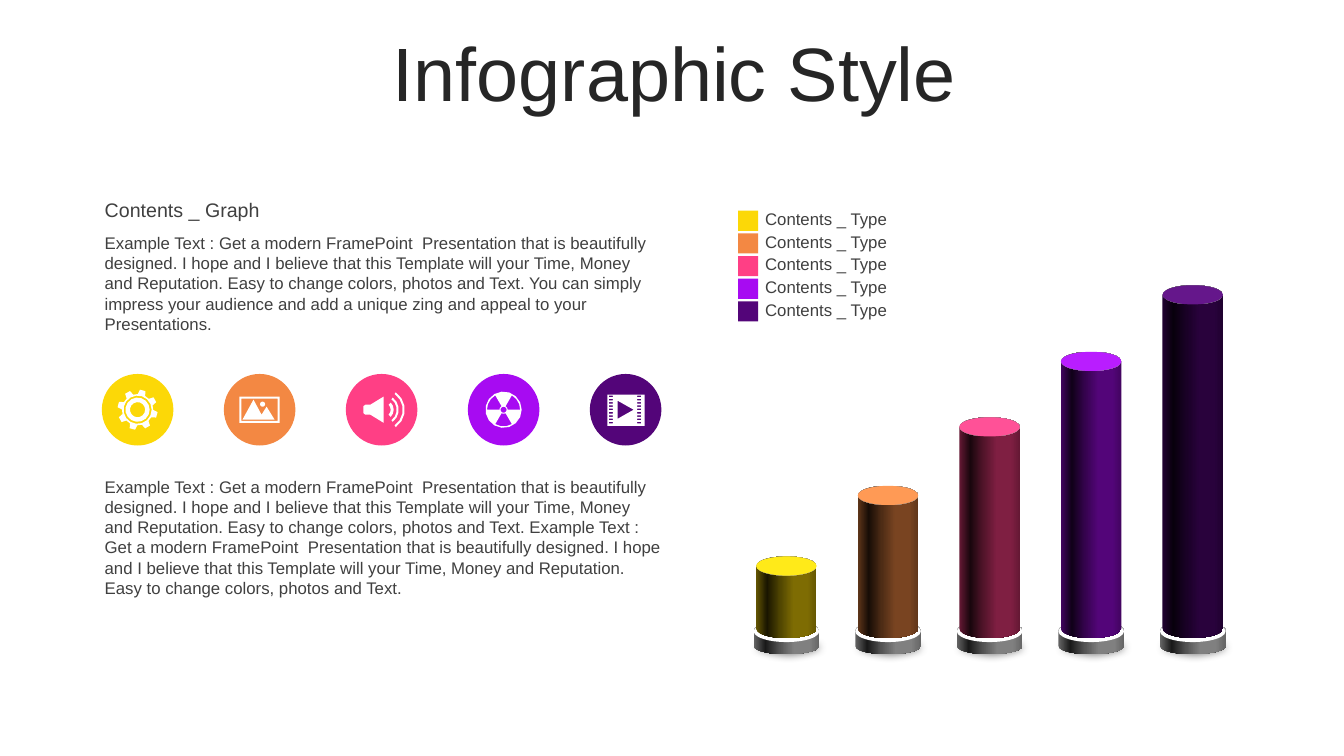
from math import ceil, cos, sin, radians
from lxml.etree import SubElement
from pptx import Presentation
from pptx.dml.color import RGBColor
from pptx.enum.shapes import MSO_SHAPE
from pptx.enum.text import MSO_ANCHOR, PP_ALIGN
from pptx.oxml.ns import qn
from pptx.util import Inches, Pt

COLORS = ["FCD807", "F38843", "FF3F85", "A70BF2", "530579"]
BAR_TOPS = [5.52, 4.82, 4.14, 3.49, 2.83]
INTRO = ("Example Text : Get a modern FramePoint  Presentation that is beautifully designed. "
         "I hope and I believe that this Template will your Time, Money and Reputation. "
         "Easy to change colors, photos and Text. ")
TEXTS = [  # words, left, top, width, height, format
    ("Infographic Style", 0.36, 0.37, 12.66, 0.79,
     {"size": 54, "color": "262626", "align": PP_ALIGN.CENTER, "anchor": MSO_ANCHOR.MIDDLE}),
    ("Contents _ Graph", 0.94, 1.91, 5.73, 0.34, {"size": 14}),
    (INTRO + "You can simply impress your audience and add a unique zing and appeal "
     "to your Presentations.", 0.94, 2.26, 5.73, 1.11, {}),
    (INTRO + INTRO.strip(), 0.94, 4.68, 5.73, 1.31, {}),
]
LEGEND = "Contents _ Type"
LEGEND_LEFT, LEGEND_TOP, LEGEND_PITCH, SWATCH = 7.32, 2.09, 0.225, 0.2
DISC_LEFT, DISC_TOP, DISC_PITCH, DISC = 1.01, 3.71, 1.21, 0.71
BAR_LEFT, BAR_PITCH, BAR_WIDTH, BAR_BOTTOM, CAP = 7.5, 1.0075, 0.6, 6.33, 0.19
BASE_WIDTH, BASE_TOP, BASE_HEIGHT, RIM = 0.65, 6.17, 0.32, 0.2

deck = Presentation()
deck.slide_width, deck.slide_height = Inches(13.33), Inches(7.5)
page = deck.slides.add_slide(deck.slide_layouts[6])


def rgb(value):
    return RGBColor.from_string(value)


def adjust(value, factor=1, shift=0):
    """Scale and shift each channel of a hex colour."""
    channels = (int(value[i:i + 2], 16) for i in (0, 2, 4))
    return "".join(f"{min(255, int(c * factor) + shift):02X}" for c in channels)


def add_text(words, left, top, width, height, style):
    look = {"size": 12, "color": "404040", "align": PP_ALIGN.LEFT,
            "anchor": MSO_ANCHOR.TOP} | style
    frame = page.shapes.add_textbox(*map(Inches, (left, top, width, height))).text_frame
    frame.word_wrap = True
    frame.vertical_anchor = look["anchor"]
    para = frame.paragraphs[0]
    para.alignment = look["align"]
    if look["size"] > 50:
        para.line_spacing = 0.9
    span = para.add_run()
    span.text = words
    for name, value in {"name": "Arial", "size": Pt(look["size"])}.items():
        setattr(span.font, name, value)
    span.font.color.rgb = rgb(look["color"])


def paint(shape, color):
    shape.shadow.inherit = False
    shape.fill.solid()
    shape.fill.fore_color.rgb = rgb(color)
    shape.line.fill.background()
    return shape


def add_shape(kind, left, top, width, height, color):
    return paint(page.shapes.add_shape(kind, *map(Inches, (left, top, width, height))), color)


def add_cylinder(left, top, width, height, cap, color):
    """Draw a can shaded across, darkest near its left side."""
    can = add_shape(MSO_SHAPE.CAN, left, top, width, height, color)
    can.adjustments[0] = cap / min(width, height)
    can.fill.gradient()
    can.fill.gradient_angle = 0
    stops = can.fill._fill._gradFill.find(qn("a:gsLst"))
    for stop in list(stops):
        stops.remove(stop)
    for place, factor in ((0, 0.8), (18, 0.2), (40, 0.65), (62, 1), (85, 1), (100, 0.8)):
        stop = SubElement(stops, qn("a:gs"), pos=str(place * 1000))
        SubElement(stop, qn("a:srgbClr"), val=adjust(color, factor))


def add_shadow(left, top, width, height):
    shade = add_shape(MSO_SHAPE.OVAL, left, top, width, height, "808080")
    effects = shade._element.spPr.find(qn("a:effectLst"))
    SubElement(effects, qn("a:softEdge"), rad=str(Inches(0.08)))


def arc(radius, start=0, end=360, x=0, y=0):
    """Points along an arc, at most 24 degrees apart."""
    steps = ceil(abs(end - start) / 24)
    turns = [radians(start + (end - start) * i / steps) for i in range(steps + 1)]
    return [(x + radius * cos(turn), y + radius * sin(turn)) for turn in turns]


def band(inner, outer, start, end, x=0):
    return arc(outer, start, end, x) + arc(inner, end, start, x)


def box(left, top, width, height):
    return [(left, top), (left + width, top), (left + width, top + height), (left, top + height)]


def gear():
    teeth = [(r * cos(radians(a)), r * sin(radians(a)))
             for tooth in range(8)
             for r, a in ((spoke, tooth * 45 - 75 + turn) for spoke, turn in
                          ((0.155, -14), (0.2, -8), (0.2, 8), (0.155, 14)))]
    return [teeth, arc(0.14), arc(0.12), arc(0.075)]


def photo():
    hills = [(-0.06, -0.1), (0.02, 0.05), (0.07, -0.03), (0.15, 0.1), (-0.17, 0.1)]
    return [box(-0.2, -0.13, 0.4, 0.26), box(-0.18, -0.11, 0.36, 0.22),
            hills, arc(0.025, x=0.03, y=-0.055)]


def speaker():
    horn = [(0.02, -0.13), (0.02, 0.13), (-0.11, 0.05), (-0.16, 0.05), (-0.18, 0.035),
            (-0.18, -0.035), (-0.16, -0.05), (-0.11, -0.05)]
    waves = ((0.07, 0.1, 45), (0.13, 0.15, 53), (0.19, 0.21, 55))
    return [horn] + [band(a, b, -turn, turn, x=0.02) for a, b, turn in waves]


def radiation():
    blades = [band(0.04, 0.165, turn, turn + 60) for turn in (60, 180, 300)]
    return [arc(0.18), arc(0.03)] + blades


def film():
    holes = [box(left, -0.14 + row * 0.0325, 0.04, 0.015)
             for left in (-0.165, 0.115) for row in range(9)]
    return [box(-0.18, -0.15, 0.37, 0.31), [(-0.08, -0.09), (-0.08, 0.09), (0.08, 0)]] + holes


def add_icon(outlines, x, y):
    """Join outlines, given from the icon's middle, into one white shape."""
    placed = [[(Inches(x + dx), Inches(y + dy)) for dx, dy in line] for line in outlines]
    builder = page.shapes.build_freeform(*placed[0][0])
    for index, line in enumerate(placed):
        if index:
            builder.move_to(*line[0])
        builder.add_line_segments(line[1:], close=True)
    paint(builder.convert_to_shape(), "FFFFFF")


for entry in TEXTS:
    add_text(*entry)

ICONS = [gear, photo, speaker, radiation, film]
for column, (color, bar_top, icon) in enumerate(zip(COLORS, BAR_TOPS, ICONS)):
    row_top = LEGEND_TOP + column * LEGEND_PITCH
    add_shape(MSO_SHAPE.RECTANGLE, LEGEND_LEFT, row_top, SWATCH, SWATCH, color)
    add_text(LEGEND, LEGEND_LEFT + 0.17, row_top - 0.07, 1.43, 0.3,
             {"anchor": MSO_ANCHOR.MIDDLE})

    disc_left = DISC_LEFT + column * DISC_PITCH
    add_shape(MSO_SHAPE.OVAL, disc_left, DISC_TOP, DISC, DISC, color)
    add_icon(icon(), disc_left + DISC / 2, DISC_TOP + DISC / 2)

    left = BAR_LEFT + column * BAR_PITCH
    base_left = left - (BASE_WIDTH - BAR_WIDTH) / 2
    add_shadow(base_left - 0.12, BASE_TOP + 0.1, 0.93, 0.31)
    add_cylinder(base_left, BASE_TOP, BASE_WIDTH, BASE_HEIGHT, RIM, "808080")
    add_shape(MSO_SHAPE.OVAL, base_left, BASE_TOP - 0.01, BASE_WIDTH, RIM + 0.01, "FFFFFF")
    add_cylinder(left, bar_top, BAR_WIDTH, BAR_BOTTOM - bar_top, CAP, adjust(color, 0.5))
    add_shape(MSO_SHAPE.OVAL, left, bar_top, BAR_WIDTH, CAP, adjust(color, shift=18))

deck.save("out.pptx")
